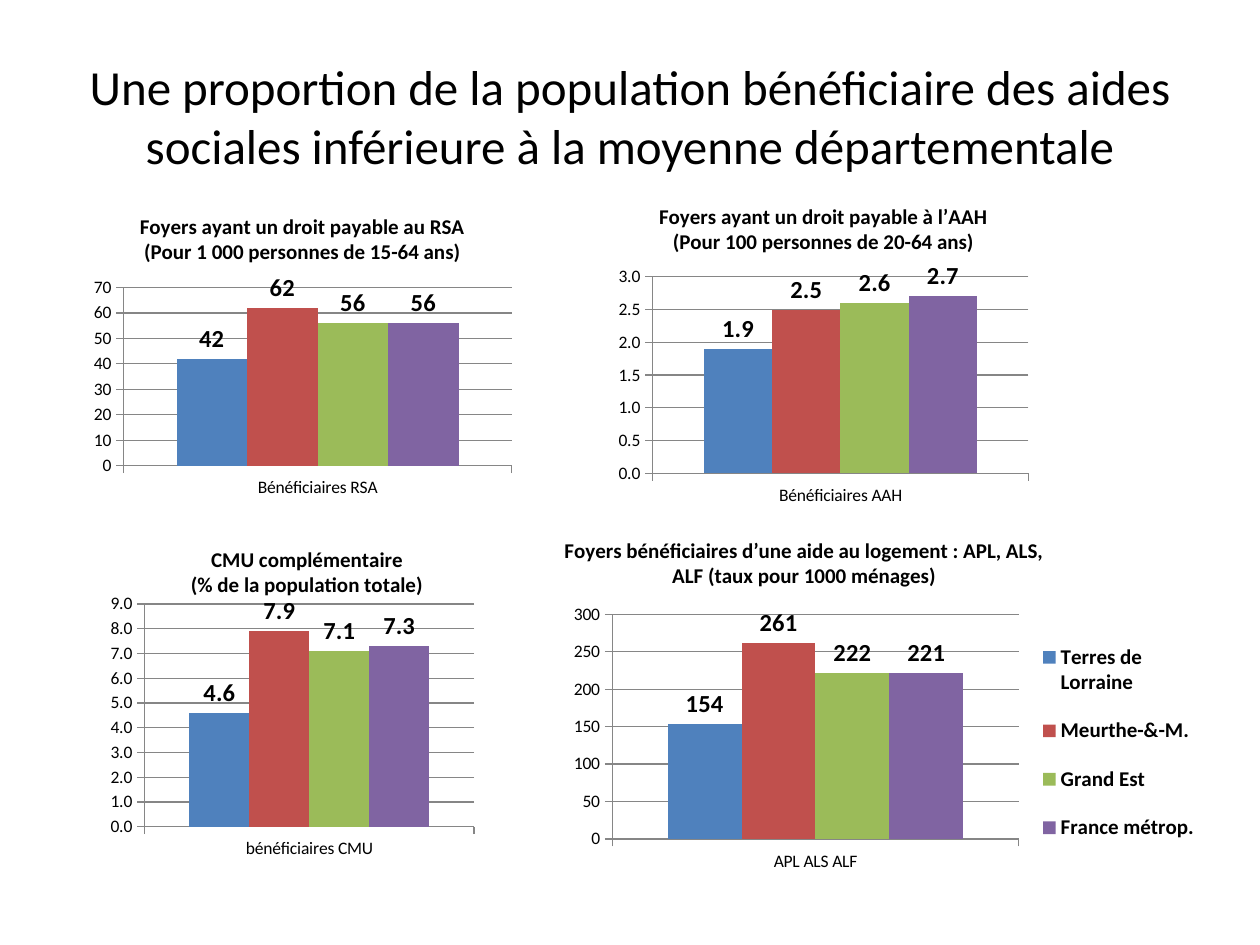
from pptx import Presentation
from pptx.chart.data import CategoryChartData
from pptx.dml.color import RGBColor
from pptx.enum.chart import XL_CHART_TYPE, XL_LABEL_POSITION, XL_LEGEND_POSITION, XL_TICK_MARK
from pptx.enum.text import MSO_ANCHOR, PP_ALIGN
from pptx.oxml import parse_xml
from pptx.oxml.ns import nsdecls
from pptx.util import Inches, Pt

COLUMN = XL_CHART_TYPE.COLUMN_CLUSTERED
ABOVE = XL_LABEL_POSITION.OUTSIDE_END
RIGHT = XL_LEGEND_POSITION.RIGHT
OUT = XL_TICK_MARK.OUTSIDE
CENTER = PP_ALIGN.CENTER
MIDDLE = MSO_ANCHOR.MIDDLE

FONT = "Calibri"
BLACK, GREY = "000000", "868686"
AREAS = [
    ("Terres de Lorraine", "4F81BD"),
    ("Meurthe-&-M.", "C0504D"),
    ("Grand Est", "9BBB59"),
    ("France métrop.", "8064A2"),
]

# Box, title lines, category, values, number format, axis top and step, layouts
CHARTS = [
    dict(box=(4.45, 4.14, 5.12, 2.83),
         title=["Foyers bénéficiaires d’une aide au logement : APL, ALS, ALF (taux pour 1000 ménages)"],
         label="APL ALS ALF", vals=(154, 261, 222, 221), fmt="0", top=300, step=50,
         plot=(0.08, 0.26, 0.63, 0.63), head=(0, 0.03),
         key=(0.74, 0.28, 0.25, 0.68)),
    dict(box=(0.43, 4.3, 4.22, 2.6),
         title=["CMU complémentaire", "(% de la population totale)"],
         label="bénéficiaires CMU", vals=(4.6, 7.9, 7.1, 7.3), fmt="0.0", top=9, step=1,
         plot=(0.17, 0.19, 0.62, 0.68), head=(0.25, 0)),
    dict(box=(4.84, 1.47, 3.39, 2.6),
         title=["Foyers ayant un droit payable à l’AAH", "(Pour 100 personnes de 20-64 ans)"],
         label="Bénéficiaires AAH", vals=(1.9, 2.5, 2.6, 2.7), fmt="0.0", top=3, step=0.5,
         plot=(0.1, 0.28, 0.88, 0.6)),
    dict(box=(0.67, 1.55, 3.46, 2.44),
         title=["Foyers ayant un droit payable au RSA", "(Pour 1 000 personnes de 15-64 ans)"],
         label="Bénéficiaires RSA", vals=(42, 62, 56, 56), fmt="0", top=70, step=10,
         plot=(0.09, 0.3, 0.89, 0.58)),
]


def color(code):
    return RGBColor.from_string(code)


def style(font, size, bold=False):
    font.name, font.size, font.bold = FONT, Pt(size), bold
    font.color.rgb = color(BLACK)


def arrange(part, index, spots, inner=False):
    """Give a chart part a manual place, in fractions of the chart."""
    for old in part.xpath("c:layout"):
        part.remove(old)
    target = '<c:layoutTarget val="inner"/>' if inner else ""
    modes = "".join(f'<c:{k}Mode val="edge"/>' for k in "xy")
    sizes = "".join(f'<c:{k} val="{v}"/>' for k, v in zip("xywh", spots))
    part.insert(index, parse_xml(
        f'<c:layout {nsdecls("c")}><c:manualLayout>{target}{modes}{sizes}'
        "</c:manualLayout></c:layout>"))


def add_heading(slide, box, text):
    frame = slide.shapes.add_textbox(*map(Inches, box)).text_frame
    frame.word_wrap = True
    frame.vertical_anchor = MIDDLE
    para = frame.paragraphs[0]
    para.alignment = CENTER
    run = para.add_run()
    run.text = text
    style(run.font, 28)


def add_bars(slide, box, title, label, vals, fmt, top, step, plot, head=None, key=None):
    data = CategoryChartData(number_format=fmt)
    data.categories = [label]
    for (name, _), val in zip(AREAS, vals):
        data.add_series(name, [val])
    chart = slide.shapes.add_chart(COLUMN, *map(Inches, box), data).chart
    style(chart.font, 10)
    root = chart.element

    # Title
    frame = chart.chart_title.text_frame
    for i, line in enumerate(title):
        para = frame.add_paragraph() if i else frame.paragraphs[0]
        run = para.add_run()
        run.text = line
        style(run.font, 12, True)
    chart.chart_title.include_in_layout = False
    if head:
        arrange(root.xpath("c:chart/c:title")[0], 1, head)

    # Axes
    axis = chart.value_axis
    axis.minimum_scale, axis.maximum_scale, axis.major_unit = 0, top, step
    axis.tick_labels.number_format = fmt
    axis.tick_labels.number_format_is_linked = False
    axis.major_gridlines.format.line.color.rgb = color(GREY)
    for side in (axis, chart.category_axis):
        side.major_tick_mark = OUT
        side.format.line.color.rgb = color(GREY)

    # Columns and their values
    bars = chart.plots[0]
    bars.gap_width, bars.overlap = 150, 0
    bars.vary_by_categories = False
    for series, (_, fill) in zip(bars.series, AREAS):
        series.format.fill.solid()
        series.format.fill.fore_color.rgb = color(fill)
        tags = series.data_labels
        tags.show_value = True
        tags.position = ABOVE
        tags.number_format = fmt
        tags.number_format_is_linked = False
        style(tags.font, 14, True)
    arrange(root.xpath("c:chart/c:plotArea")[0], 0, plot, inner=True)

    # Legend
    chart.has_legend = bool(key)
    if key:
        chart.legend.position = RIGHT
        chart.legend.include_in_layout = False
        style(chart.legend.font, 12, True)
        arrange(root.xpath("c:chart/c:legend")[0], 1, key)


def main():
    deck = Presentation()
    deck.slide_width, deck.slide_height = Inches(10), Inches(7.5)
    slide = deck.slides.add_slide(deck.slide_layouts[6])
    add_heading(slide, (0.5, 0.37, 9, 1.09),
                "Une proportion de la population bénéficiaire des aides "
                "sociales inférieure à la moyenne départementale")
    for chart in CHARTS:
        add_bars(slide, **chart)
    deck.save("out.pptx")


if __name__ == "__main__":
    main()
